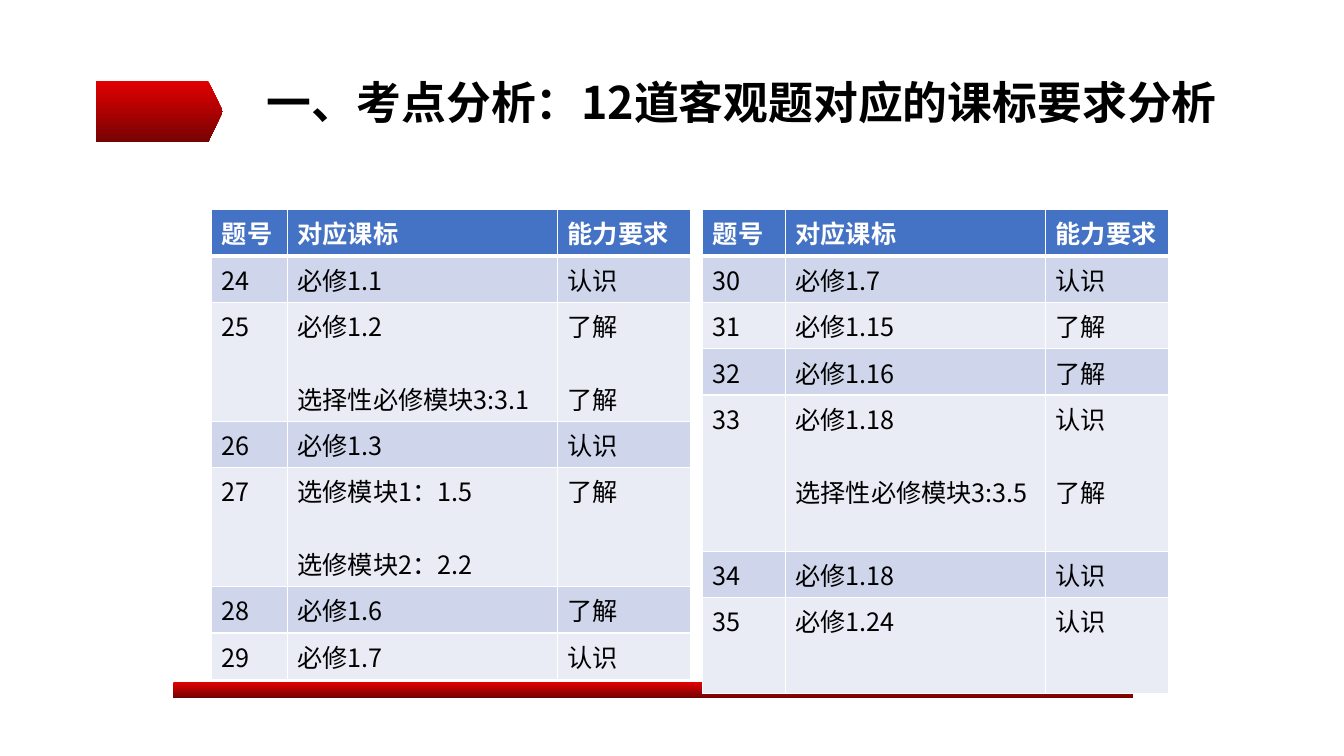
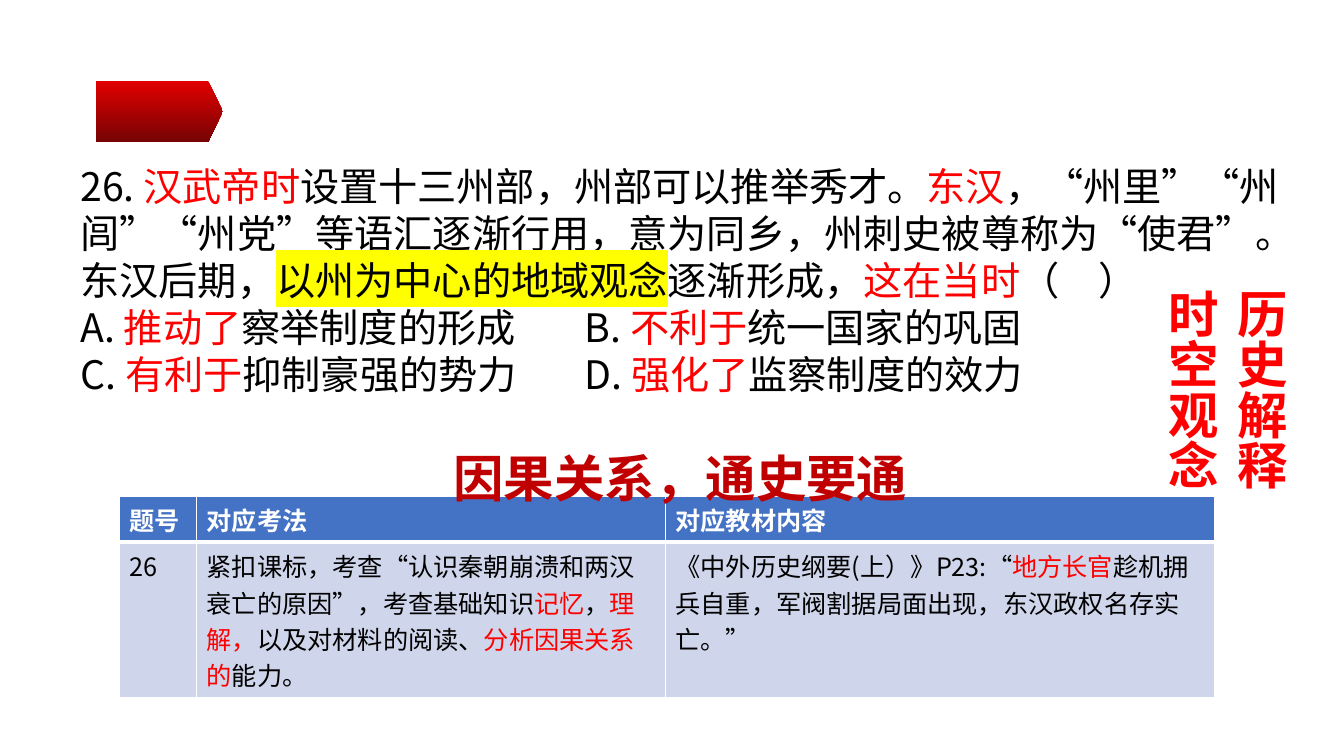
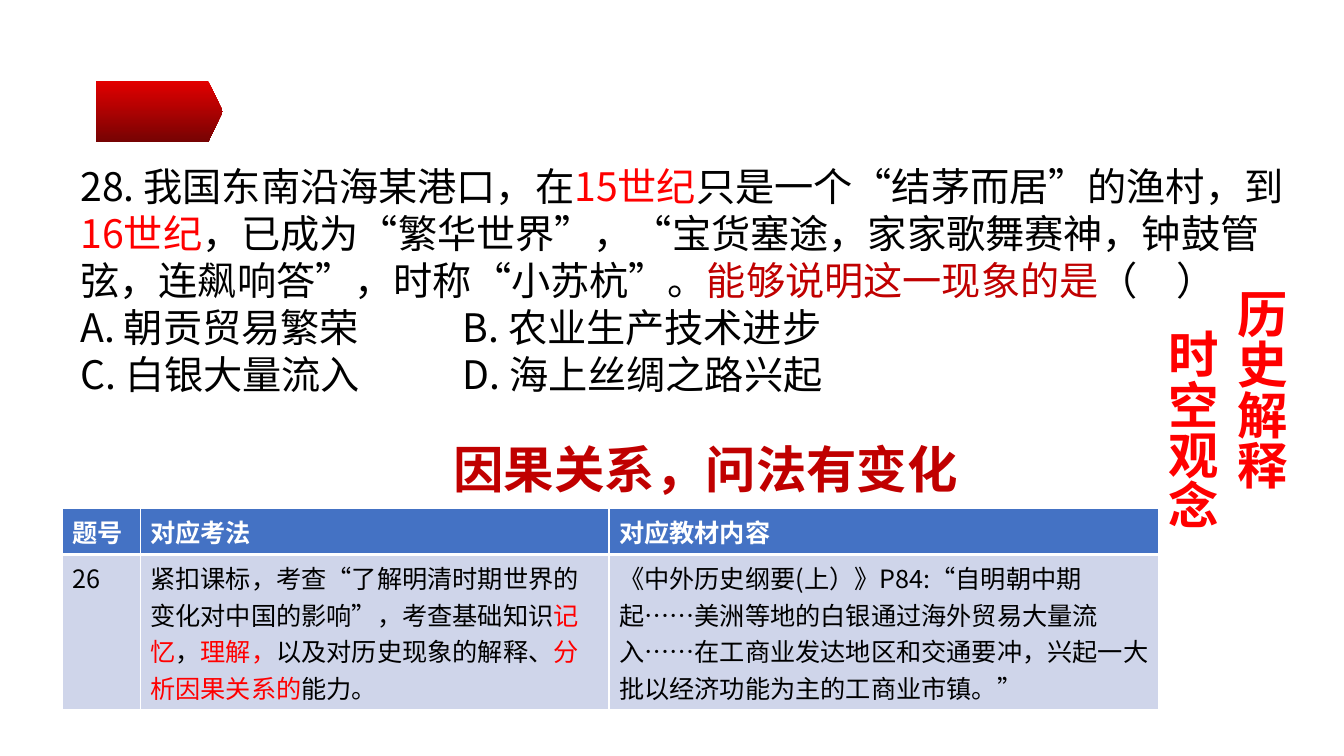
import dataclasses

import lxml.etree
import pptx
import pptx.dml.color
import pptx.enum.shapes
import pptx.enum.text
import pptx.oxml.ns
import pptx.util

Inches = pptx.util.Inches
qn = pptx.oxml.ns.qn


@dataclasses.dataclass(frozen=True)
class Theme:
    font: str = "Noto Sans CJK SC"
    latin: str = "Arial"
    black: str = "000000"
    white: str = "FFFFFF"
    red: str = "FF0000"
    crimson: str = "C00000"
    marker: str = "FFFF00"
    band_top: str = "E30000"
    band_bottom: str = "760303"
    header: str = "4472C4"
    rows: tuple = ("CFD5EA", "E9EBF5")
    title: int = 32
    question: int = 28
    keyword: int = 36
    table: int = 18
    table_line: int = 26
    rule: int = 1
    header_rule: int = 3


THEME = Theme()
ROW = 0.46
DOUBLE_ROW = 1.18


def rgb(color):
    return pptx.dml.color.RGBColor.from_string(color)


def red(text):
    return text, {"color": THEME.red}


def add_color(parent, tag, color):
    holder = lxml.etree.SubElement(parent, qn(tag))
    lxml.etree.SubElement(holder, qn("a:srgbClr"), val=color)
    return holder


def write_run(paragraph, text, size, color, bold=False, font=THEME.font, highlight=None):
    run = paragraph.add_run()
    run.text = text
    run.font.size = pptx.util.Pt(size)
    run.font.bold = bold
    run.font.color.rgb = rgb(color)
    properties = run.font._element
    if highlight:
        add_color(properties, "a:highlight", highlight)
    run.font.name = font
    lxml.etree.SubElement(properties, qn("a:ea"), typeface=THEME.font)


def write(frame, paragraphs, spacing=None, gap=0, tab=None, **style):
    frame.word_wrap = True
    for index, runs in enumerate(paragraphs):
        paragraph = frame.add_paragraph() if index else frame.paragraphs[0]
        if spacing:
            paragraph.line_spacing = spacing
        if index and gap:
            paragraph.space_before = pptx.util.Pt(gap)
        if tab:
            stops = lxml.etree.SubElement(paragraph._p.get_or_add_pPr(), qn("a:tabLst"))
            lxml.etree.SubElement(stops, qn("a:tab"), pos=str(Inches(tab)), algn="l")
        for run in [runs] if isinstance(runs, str) else runs:
            text, change = (run, {}) if isinstance(run, str) else run
            write_run(paragraph, text, **{**style, **change})


def add_text(slide, box, paragraphs, vertical=False, grow=False, **style):
    text_box = slide.shapes.add_textbox(*map(Inches, box))
    frame = text_box.text_frame
    write(frame, paragraphs, **style)
    if grow:
        frame.auto_size = pptx.enum.text.MSO_AUTO_SIZE.SHAPE_TO_FIT_TEXT
    if vertical:
        text_box.element.find(".//" + qn("a:bodyPr")).set("vert", "eaVert")
    return frame


def add_band(slide, preset, box):
    band = slide.shapes.add_shape(preset, *map(Inches, box))
    band.shadow.inherit = False
    band.line.fill.background()
    band.fill.gradient()
    band.fill.gradient_angle = 270
    for stop, color in zip(band.fill.gradient_stops, (THEME.band_top, THEME.band_bottom)):
        stop.color.rgb = rgb(color)
    return band


def add_bands(slide):
    preset = pptx.enum.shapes.MSO_SHAPE
    add_band(slide, preset.RECTANGLE, (1.72, 6.77, 9.52, 0.15))
    tag = add_band(slide, preset.PENTAGON, (0.95, 0.8, 1.26, 0.61))
    tag.adjustments[0] = 0.24


def fill_cell(cell, color, top, bottom):
    properties = cell._tc.get_or_add_tcPr()
    widths = {"a:lnL": THEME.rule, "a:lnR": THEME.rule, "a:lnT": top, "a:lnB": bottom}
    for side, width in widths.items():
        add_color(add_border(properties, side, width), "a:solidFill", THEME.white)
    cell.fill.solid()
    cell.fill.fore_color.rgb = rgb(color)


def add_border(properties, side, width):
    return lxml.etree.SubElement(properties, qn(side), w=str(pptx.util.Pt(width)))


def add_grid(slide, left, top, widths, heights, rows):
    table = slide.shapes.add_table(
        len(rows), len(widths), Inches(left), Inches(top),
        Inches(sum(widths)), Inches(sum(heights))).table
    for column, width in zip(table.columns, widths):
        column.width = Inches(width)
    for index, (row, height, texts) in enumerate(zip(table.rows, heights, rows)):
        row.height = Inches(height)
        is_header = index == 0
        fill = THEME.header if is_header else THEME.rows[(index - 1) % 2]
        for cell, paragraphs in zip(row.cells, texts):
            fill_cell(cell, fill,
                      THEME.header_rule if index == 1 else THEME.rule,
                      THEME.header_rule if is_header else THEME.rule)
            write(cell.text_frame,
                  [paragraphs] if isinstance(paragraphs, str) else paragraphs,
                  gap=THEME.table_line, size=THEME.table, bold=is_header,
                  color=THEME.white if is_header else THEME.black)


def new_slide(deck):
    return deck.slides.add_slide(deck.slide_layouts[6])


def overview_slide(deck, title, tables):
    slide = new_slide(deck)
    frame = add_text(slide, (2.55, 0.8, 10, 0.76), [title], spacing=0.9,
                     size=THEME.title, color=THEME.black, bold=True)
    frame.margin_top = 0
    add_bands(slide)
    header = ("题号", "对应课标", "能力要求")
    for left, widths, heights, rows in tables:
        add_grid(slide, left, 2.08, widths, heights, [header, *rows])


def question_slide(deck, stem, tab, stem_width, method, textbook, table_at,
                   summary, summary_top, concept_top):
    slide = new_slide(deck)
    add_bands(slide)
    add_grid(slide, *table_at, (0.77, 4.65, 5.45), (ROW, 1.54),
             [("题号", "对应考法", "对应教材内容"), ("26", [method], [textbook])])
    add_text(slide, (0.7, 1.56, stem_width, 3.54), stem, tab=tab,
             size=THEME.question, color=THEME.black)
    keyword = {"size": THEME.keyword, "bold": True, "grow": True}
    for text, left, top in (("时空观念", 11.36, concept_top), ("历史解释", 12.04, 2.77)):
        add_text(slide, (left, top, 0.81, 2.63), [text], vertical=True,
                 color=THEME.red, **keyword)
    add_text(slide, (4.4, summary_top, 5.28, 0.71), [summary],
             color=THEME.crimson, **keyword)


def exam_method(topic, skill):
    return [f"紧扣课标，考查“{topic}”，考查基础知识", red("记忆"), "，", red("理解，"),
            f"以及对{skill}、", red("分析因果关系的"), "能力。"]


def main():
    deck = pptx.Presentation()
    deck.slide_width, deck.slide_height = Inches(13.33), Inches(7.5)

    first_half = [
        ("24", "必修1.1", "认识"),
        ("25", ["必修1.2", "选择性必修模块3:3.1"], ["了解", "了解"]),
        ("26", "必修1.3", "认识"),
        ("27", ["选修模块1：1.5", "选修模块2：2.2"], "了解"),
        ("28", "必修1.6", "了解"),
        ("29", "必修1.7", "认识"),
    ]
    second_half = [
        ("30", "必修1.7", "认识"),
        ("31", "必修1.15", "了解"),
        ("32", "必修1.16", "了解"),
        ("33", ["必修1.18", "选择性必修模块3:3.5"], ["认识", "了解"]),
        ("34", "必修1.18", "认识"),
        ("35", "必修1.24", "认识"),
    ]
    overview_slide(deck, "一、考点分析：12道客观题对应的课标要求分析", [
        (2.1, (0.75, 2.68, 1.32),
         (ROW, ROW, DOUBLE_ROW, ROW, DOUBLE_ROW, ROW, ROW), first_half),
        (6.97, (0.82, 2.58, 1.22),
         (ROW, ROW, ROW, ROW, 1.55, ROW, 0.95), second_half),
    ])

    question_slide(
        deck,
        stem=[
            ["26. ", red("汉武帝时"), "设置十三州部，州部可以推举秀才。", red("东汉"),
             "，“州里”“州闾”“州党”等语汇逐渐行用，意为同乡，州刺史被尊称为“使君”。东汉后期，",
             ("以州为中心的地域观念", {"highlight": THEME.marker}),
             "逐渐形成，", red("这在当时"), "（　）"],
            ["A. ", red("推动了"), "察举制度的形成\tB. ", red("不利于"), "统一国家的巩固"],
            ["C. ", red("有利于"), "抑制豪强的势力\tD. ", red("强化了"), "监察制度的效力"],
        ],
        tab=5, stem_width=12.39,
        method=exam_method("认识秦朝崩溃和两汉衰亡的原因", "材料的阅读"),
        textbook=["《中外历史纲要(上）》P23:“", red("地方长官"),
                  "趁机拥兵自重，军阀割据局面出现，东汉政权名存实亡。”"],
        table_at=(1.18, 4.92),
        summary="因果关系，通史要通", summary_top=4.39, concept_top=2.77)

    question_slide(
        deck,
        stem=[
            ["28. 我国东南沿海某港口，在", red("15世纪"), "只是一个“结茅而居”的渔村，到",
             red("16世纪"),
             "，已成为“繁华世界”，“宝货塞途，家家歌舞赛神，钟鼓管弦，连飙响答”，时称“小苏杭”。",
             ("能够说明这一现象的是", {"color": THEME.crimson}), "（　）"],
            "A. 朝贡贸易繁荣\tB. 农业生产技术进步",
            "C. 白银大量流入\tD. 海上丝绸之路兴起",
        ],
        tab=3.79, stem_width=12.15,
        method=exam_method("了解明清时期世界的变化对中国的影响", "历史现象的解释"),
        textbook=["《中外历史纲要(上）》P84:“自明朝中期起",
                  ("……美洲等地的白银通过海外贸易大量流入……在工商业发达地区和交通要冲，"
                   "兴起一大批以经济功能为主的工商业市镇", {"font": THEME.latin}),
                  "。”"],
        table_at=(0.62, 5.04),
        summary="因果关系，问法有变化", summary_top=4.3, concept_top=3.17)

    deck.save("out.pptx")


if __name__ == "__main__":
    main()
